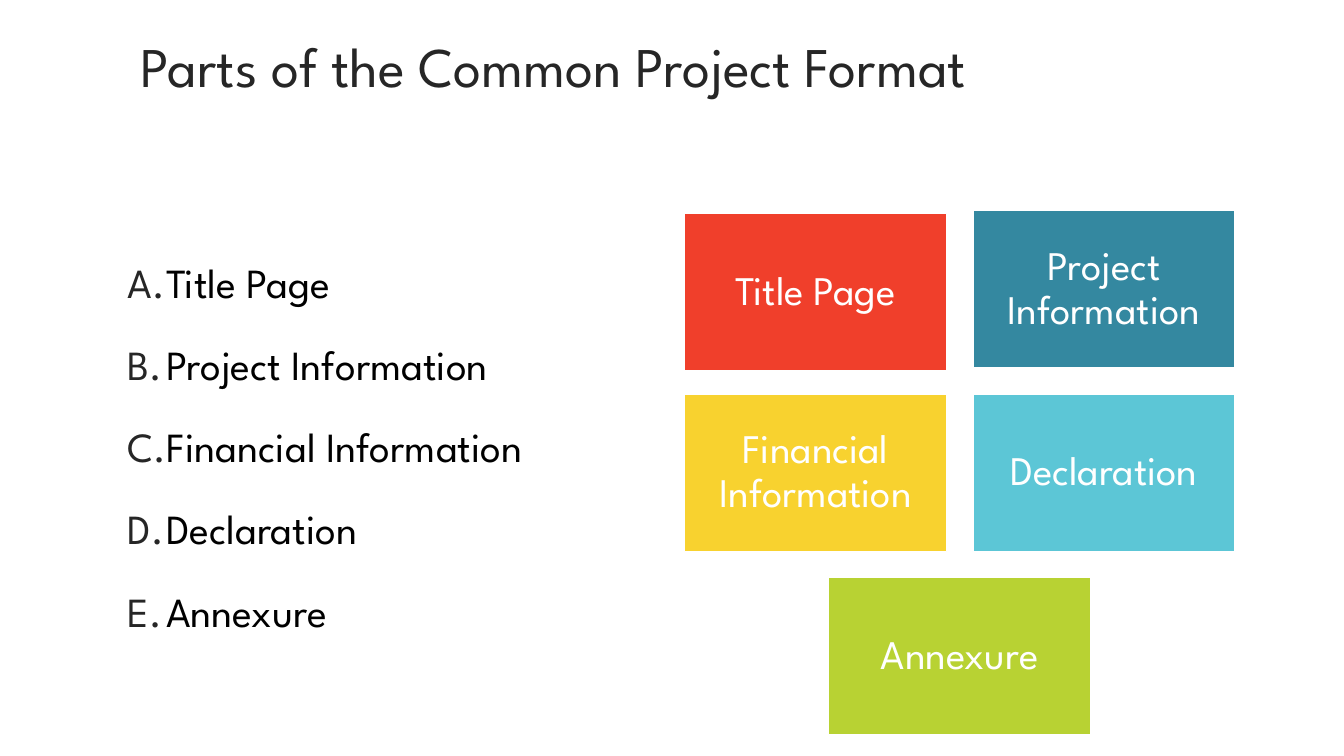
from lxml import etree
from pptx import Presentation
from pptx import util as u
from pptx.dml.color import RGBColor
from pptx.enum import shapes, text
from pptx.oxml.ns import qn

# Content
TITLE = "Parts of the Common Project Format"
# name, fill, left, top (px)
PARTS = [
    ("Title Page", "red", 679, 212),
    ("Project Information", "teal", 965, 209),
    ("Financial Information", "gold", 679, 391),
    ("Declaration", "aqua", 965, 391),
    ("Annexure", "lime", 822, 573),
]
COLORS = {
    "ink": "262626", "black": "000000", "white": "FFFFFF",
    "red": "F03F2B", "teal": "3488A0", "gold": "F8D22F",
    "aqua": "5CC6D6", "lime": "B8D233",
}
FONT = "League Spartan"
BOX_W, BOX_H, PAD = 260, 156, 12
INDENT = 38


def px(n):
    return u.Emu(n * 9144)  # 100 px to the inch


def color(name):
    return RGBColor.from_string(COLORS[name])


def style(para, size, ink, spacing):
    para.line_spacing = spacing
    para.font.name = FONT
    para.font.size = u.Pt(size)
    para.font.color.rgb = color(ink)


def add_text(slide, left, top, width, height, anchor):
    box = slide.shapes.add_textbox(px(left), px(top), px(width), px(height))
    frame = box.text_frame
    frame.word_wrap = True
    frame.vertical_anchor = anchor
    return frame


def add_letter(para):
    props = para._p.get_or_add_pPr()
    props.set("marL", str(px(INDENT)))
    props.set("indent", str(-px(INDENT)))
    tint = etree.SubElement(props, qn("a:buClr"))
    etree.SubElement(tint, qn("a:srgbClr"), val=COLORS["ink"])
    etree.SubElement(props, qn("a:buFont"), typeface=FONT)
    etree.SubElement(props, qn("a:buAutoNum"), type="alphaUcPeriod")


def add_box(slide, name, fill, left, top):
    box = slide.shapes.add_shape(
        shapes.MSO_SHAPE.RECTANGLE, px(left), px(top), px(BOX_W), px(BOX_H))
    box.shadow.inherit = False
    box.fill.solid()
    box.fill.fore_color.rgb = color(fill)
    box.line.color.rgb = color("white")
    box.line.width = u.Pt(1)
    frame = box.text_frame
    frame.word_wrap = True
    frame.vertical_anchor = text.MSO_ANCHOR.MIDDLE
    frame.margin_left = frame.margin_right = px(PAD)
    frame.margin_top = frame.margin_bottom = px(PAD)
    frame.text = name
    para = frame.paragraphs[0]
    para.alignment = text.PP_ALIGN.CENTER
    style(para, 29, "white", 0.9)


def main():
    deck = Presentation()
    deck.slide_width, deck.slide_height = px(1333), px(750)
    slide = deck.slides.add_slide(deck.slide_layouts[6])

    # Title
    frame = add_text(slide, 130, -6, 1100, 150, text.MSO_ANCHOR.MIDDLE)
    frame.text = TITLE
    style(frame.paragraphs[0], 40, "ink", 0.9)

    # Lettered list
    frame = add_text(slide, 117, 230, 1100, 421, text.MSO_ANCHOR.TOP)
    frame.text = "\n".join(part[0] for part in PARTS)
    for i, para in enumerate(frame.paragraphs):
        add_letter(para)
        style(para, 29.6, "black", 1.4)
        if i:
            para.space_before = u.Pt(9)

    # Coloured boxes
    for part in PARTS:
        add_box(slide, *part)

    deck.save("out.pptx")


if __name__ == "__main__":
    main()
